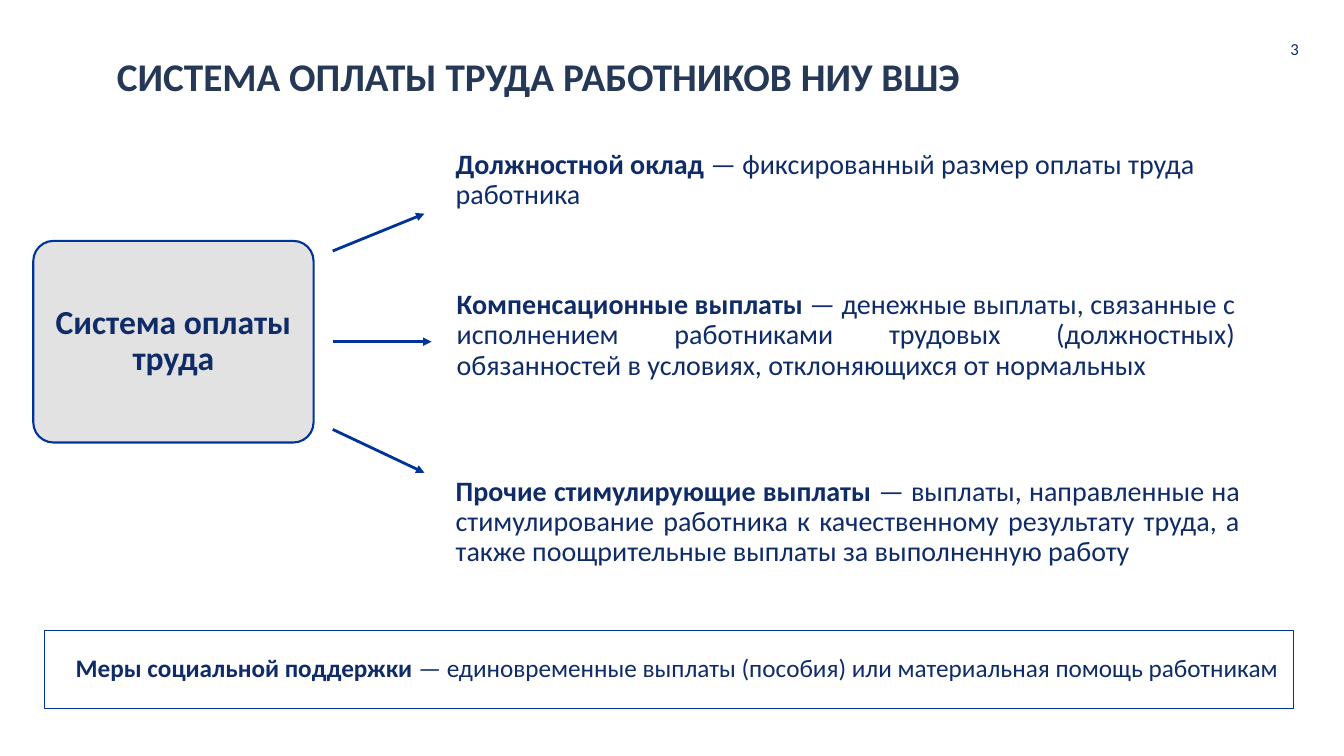
from lxml import etree
from pptx import Presentation
from pptx.dml.color import RGBColor
from pptx.enum import shapes, text
from pptx.oxml import ns
from pptx.util import Inches, Pt

FONT = "Calibri"
TITLE_BLUE = RGBColor(0x25, 0x39, 0x57)
TEXT_BLUE = RGBColor(0x0F, 0x2C, 0x68)
LINE_BLUE = RGBColor(0x00, 0x33, 0x99)
PALE_GREY = RGBColor(0xE2, 0xE2, 0xE2)

# Lead words, explanation, box and alignment
PAYMENTS = [
    ("Должностной оклад ", "— фиксированный размер оплаты труда работника",
     (4.51, 1.1, 8.39, 1.38), text.PP_ALIGN.LEFT),
    ("Компенсационные выплаты ",
     "— денежные выплаты, связанные с исполнением работниками трудовых "
     "(должностных) обязанностей в условиях, отклоняющихся от нормальных",
     (4.52, 2.84, 7.74, 0.98), text.PP_ALIGN.JUSTIFY),
    ("Прочие стимулирующие выплаты ",
     "— выплаты, направленные на стимулирование работника к качественному "
     "результату труда, а также поощрительные выплаты за выполненную работу",
     (4.51, 4.69, 7.8, 0.98), text.PP_ALIGN.JUSTIFY),
]
# Start height, end point
ARROWS = [(2.49, 4.21, 2.12), (3.39, 4.28, 3.39), (4.26, 4.21, 4.69)]
ARROW_START = 3.3


def write(shape, words, lead="", size=20, bold=False, color=TEXT_BLUE,
          align=text.PP_ALIGN.LEFT, anchor=text.MSO_ANCHOR.MIDDLE,
          spacing=0.9, side=0.01, edge=0.01):
    """Fill a shape with one paragraph, opened by an optional bold lead."""
    frame = shape.text_frame
    frame.word_wrap = True
    frame.auto_size = text.MSO_AUTO_SIZE.NONE
    frame.vertical_anchor = anchor
    frame.margin_left = frame.margin_right = Inches(side)
    frame.margin_top = frame.margin_bottom = Inches(edge)
    paragraph = frame.paragraphs[0]
    paragraph.alignment = align
    paragraph.line_spacing = spacing
    for part, is_bold in ((lead, True), (words, bold)):
        if part:
            run = paragraph.add_run()
            run.text = part
            run.font.name = FONT
            run.font.size = Pt(size)
            run.font.bold = is_bold
            run.font.color.rgb = color


def add_title(slide, words):
    title = slide.shapes.title
    title.left, title.top = Inches(1.13), Inches(0.49)
    title.width, title.height = Inches(8.89), Inches(0.46)
    write(title, words, size=28, bold=True, color=TITLE_BLUE, spacing=1.0,
          anchor=text.MSO_ANCHOR.TOP, side=0.03, edge=0.03)


def add_label(slide, box, words, **style):
    label = slide.shapes.add_textbox(*map(Inches, box))
    write(label, words, **style)


def add_panel(slide, kind, box, words, line_width, fill=None, **style):
    panel = slide.shapes.add_shape(kind, *map(Inches, box))
    panel.shadow.inherit = False
    if fill is None:
        panel.fill.background()
    else:
        panel.fill.solid()
        panel.fill.fore_color.rgb = fill
    panel.line.color.rgb = LINE_BLUE
    panel.line.width = Pt(line_width)
    write(panel, words, **style)
    return panel


def add_arrow(slide, *ends):
    arrow = slide.shapes.add_connector(shapes.MSO_CONNECTOR.STRAIGHT,
                                       *map(Inches, ends))
    arrow.line.color.rgb = LINE_BLUE
    arrow.line.width = Pt(2)
    head = etree.SubElement(arrow.line._get_or_add_ln(), ns.qn("a:tailEnd"))
    head.set("type", "triangle")
    etree.SubElement(arrow._element.spPr, ns.qn("a:effectLst"))


def main():
    deck = Presentation()
    deck.slide_width, deck.slide_height = Inches(13.33), Inches(7.5)
    slide = deck.slides.add_slide(deck.slide_layouts[5])

    # Heading and page number
    add_title(slide, "СИСТЕМА ОПЛАТЫ ТРУДА РАБОТНИКОВ НИУ ВШЭ")
    add_label(slide, (12.26, 0.23, 0.72, 0.5), "3", size=12, spacing=1.0,
              align=text.PP_ALIGN.RIGHT, side=0.1, edge=0.05)

    # Pay system and its three parts
    pay_system = add_panel(
        slide, shapes.MSO_SHAPE.ROUNDED_RECTANGLE, (0.33, 2.39, 2.78, 2),
        "Система оплаты труда", 1.5, fill=PALE_GREY, size=24, bold=True,
        align=text.PP_ALIGN.CENTER, side=0.15)
    pay_system.adjustments[0] = 0.1
    for lead, words, box, align in PAYMENTS:
        add_label(slide, box, words, lead=lead, align=align)
    for start_y, end_x, end_y in ARROWS:
        add_arrow(slide, ARROW_START, start_y, end_x, end_y)

    # Social support strip
    support = add_panel(
        slide, shapes.MSO_SHAPE.RECTANGLE, (0.44, 6.26, 12.39, 0.77),
        "— единовременные выплаты (пособия) или материальная помощь работникам",
        0.75, lead="Меры социальной поддержки ", size=18, side=0, edge=0)
    support.text_frame.margin_left = Inches(0.31)

    deck.save("out.pptx")


if __name__ == "__main__":
    main()
